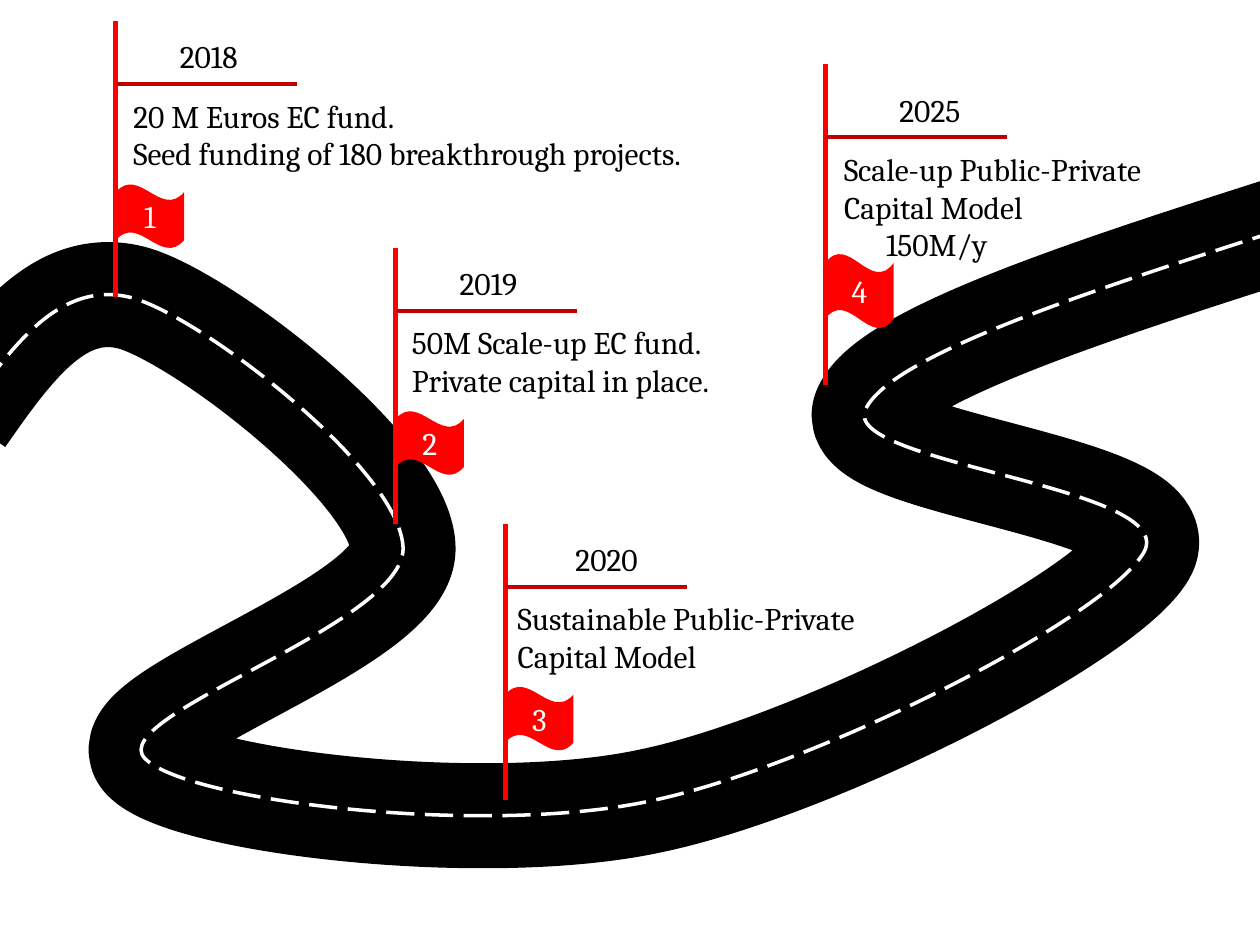
"""Build a road-map slide with four funding milestones."""
import dataclasses

import lxml.etree
import pptx
import pptx.dml.color
import pptx.enum.dml
import pptx.enum.shapes
import pptx.enum.text
import pptx.oxml.ns
import pptx.util

Pt = pptx.util.Pt
RGB = pptx.dml.color.RGBColor
qn = pptx.oxml.ns.qn


@dataclasses.dataclass(frozen=True)
class Theme:
    """Colours, type and line widths of the slide."""
    asphalt: RGB = RGB(0, 0, 0)
    marking: RGB = RGB(255, 255, 255)
    flag: RGB = RGB(255, 0, 0)
    rule: RGB = RGB(192, 0, 0)
    text: RGB = RGB(0, 0, 0)
    font: str = "Cambria"
    size: float = 18
    road_width: float = 60
    marking_width: float = 2
    pole_width: float = 3
    rule_width: float = 2.25


THEME = Theme()
ROAD_BOX = (-21.6, 128.9, 761, 337.7)
ROAD_START = (-21.6, 238.3)
ROAD_CURVES = [
    [(6.5, 198), (34.6, 158.4), (77, 170.6)],
    [(118.8, 183.6), (229, 269.3), (230.4, 313.2)],
    [(231.1, 357.1), (59.8, 409), (82.8, 433.4)],
    [(106.6, 457.9), (275.8, 478.1), (370.8, 457.9)],
    [(465.8, 438.5), (632.9, 352.8), (653.8, 315.4)],
    [(673.9, 277.9), (480.2, 265), (494.6, 234)],
    [(509, 203), (624.2, 165.6), (739.4, 128.9)],
]
MILESTONES = [
    {"box": (66.2, 12.2, 103.7, 157.7), "year": "2018", "year_inset": 29.5,
     "detail_inset": 2.9, "detail_width": 350.6,
     "details": [("20 M Euros EC fund.", 0),
                 ("Seed funding of 180 breakthrough projects.", 0)]},
    {"box": (226.1, 141.8, 103.7, 157.7), "year": "2019", "year_inset": 29.5,
     "detail_inset": 2.2, "detail_width": 194.4,
     "details": [("50M Scale-up EC fund.", 0),
                 ("Private capital in place.", 0)]},
    {"box": (288.7, 299.3, 103.7, 157.7), "year": "2020", "year_inset": 33.1,
     "detail_inset": 0, "detail_width": 218.9,
     "details": [("Sustainable Public-Private", 0), ("Capital Model", 0)]},
    {"box": (471.6, 36.7, 103.7, 183.6), "year": "2025", "year_inset": 35.3,
     "detail_inset": 3.6, "detail_width": 195.1,
     "details": [("Scale-up Public-Private", 0), ("Capital Model", 0),
                 ("150M/y", 24)]},
]


def apply_format(target, values):
    """Set each named attribute of the target."""
    for name, value in values.items():
        setattr(target, name, value)


def format_font(paragraph, color):
    """Give a paragraph the theme type in one colour."""
    apply_format(paragraph.font, {"name": THEME.font, "size": Pt(THEME.size)})
    paragraph.font.color.rgb = color


def add_stroke(shapes, start, end, color, width):
    """Draw a straight line without a shadow."""
    stroke = shapes.add_connector(
        pptx.enum.shapes.MSO_CONNECTOR.STRAIGHT,
        *(Pt(value) for value in (*start, *end)))
    stroke.line.color.rgb = color
    stroke.line.width = Pt(width)
    lxml.etree.SubElement(stroke._element.spPr, qn("a:effectLst"))


def add_label(shapes, box, lines):
    """Place a text box holding (text, indent) lines."""
    label = shapes.add_textbox(*(Pt(value) for value in box)).text_frame
    label.text = "\n".join(text for text, _ in lines)
    apply_format(label, {
        "word_wrap": False,
        "auto_size": pptx.enum.text.MSO_AUTO_SIZE.SHAPE_TO_FIT_TEXT})
    for paragraph, (_, indent) in zip(label.paragraphs, lines):
        if indent:
            paragraph._p.get_or_add_pPr().set("marL", str(Pt(indent)))
        format_font(paragraph, THEME.text)


def add_road_curve(slide, box, color, width, dash=None):
    """Draw the winding road line within its box."""
    left, top, _, height = box
    builder = slide.shapes.build_freeform(*(Pt(value) for value in ROAD_START))
    builder.add_line_segments(
        [(Pt(x), Pt(y)) for *_, (x, y) in ROAD_CURVES], close=False)
    road = builder.convert_to_shape()
    road.height = Pt(height)
    outline = next(road._element.iter(qn("a:path")))
    outline.set("h", str(road.height))
    for segment, curve in zip(outline.findall(qn("a:lnTo")), ROAD_CURVES):
        bezier = lxml.etree.Element(qn("a:cubicBezTo"))
        for x, y in curve:
            lxml.etree.SubElement(bezier, qn("a:pt"),
                                  x=str(Pt(x - left)), y=str(Pt(y - top)))
        outline.replace(segment, bezier)
    road.fill.background()
    road.line.color.rgb = color
    apply_format(road.line, {"width": Pt(width), "dash_style": dash})
    road.shadow.inherit = False


def add_flag(shapes, box, number):
    """Draw a numbered waving flag."""
    flag = shapes.add_shape(pptx.enum.shapes.MSO_SHAPE.WAVE,
                            *(Pt(value) for value in box))
    flag.shadow.inherit = False
    flag.fill.solid()
    flag.fill.fore_color.rgb = THEME.flag
    flag.line.fill.background()
    apply_format(flag.text_frame, {
        "text": str(number),
        "vertical_anchor": pptx.enum.text.MSO_ANCHOR.MIDDLE})
    paragraph = flag.text_frame.paragraphs[0]
    paragraph.alignment = pptx.enum.text.PP_ALIGN.CENTER
    format_font(paragraph, THEME.marking)


def add_milestone(slide, box, number, milestone):
    """Place a signpost with its year and details in its box."""
    left, top, width, height = box
    rule_top = top + 0.228 * height
    signpost = slide.shapes.add_group_shape().shapes
    add_stroke(signpost, (left, top), (left, top + height),
               THEME.flag, THEME.pole_width)
    add_flag(signpost, (left, top + 0.59 * height, 39, 0.232 * height), number)
    add_stroke(signpost, (left, rule_top), (left + width, rule_top),
               THEME.rule, THEME.rule_width)
    add_label(slide.shapes,
              (left + milestone["year_inset"], rule_top - 30.3, 54.7, 29),
              [(milestone["year"], 0)])
    details = milestone["details"]
    add_label(slide.shapes,
              (left + milestone["detail_inset"], rule_top + 3.5,
               milestone["detail_width"], 7.2 + 21.9 * len(details)), details)


def main():
    """Assemble and save the slide."""
    deck = pptx.Presentation()
    apply_format(deck, {"slide_width": Pt(720), "slide_height": Pt(540)})
    slide = deck.slides.add_slide(deck.slide_layouts[6])
    add_road_curve(slide, ROAD_BOX, THEME.asphalt, THEME.road_width)
    add_road_curve(slide, ROAD_BOX, THEME.marking, THEME.marking_width,
                   pptx.enum.dml.MSO_LINE.LONG_DASH)
    for number, milestone in enumerate(MILESTONES, 1):
        add_milestone(slide, milestone["box"], number, milestone)
    deck.save("out.pptx")


if __name__ == "__main__":
    main()
